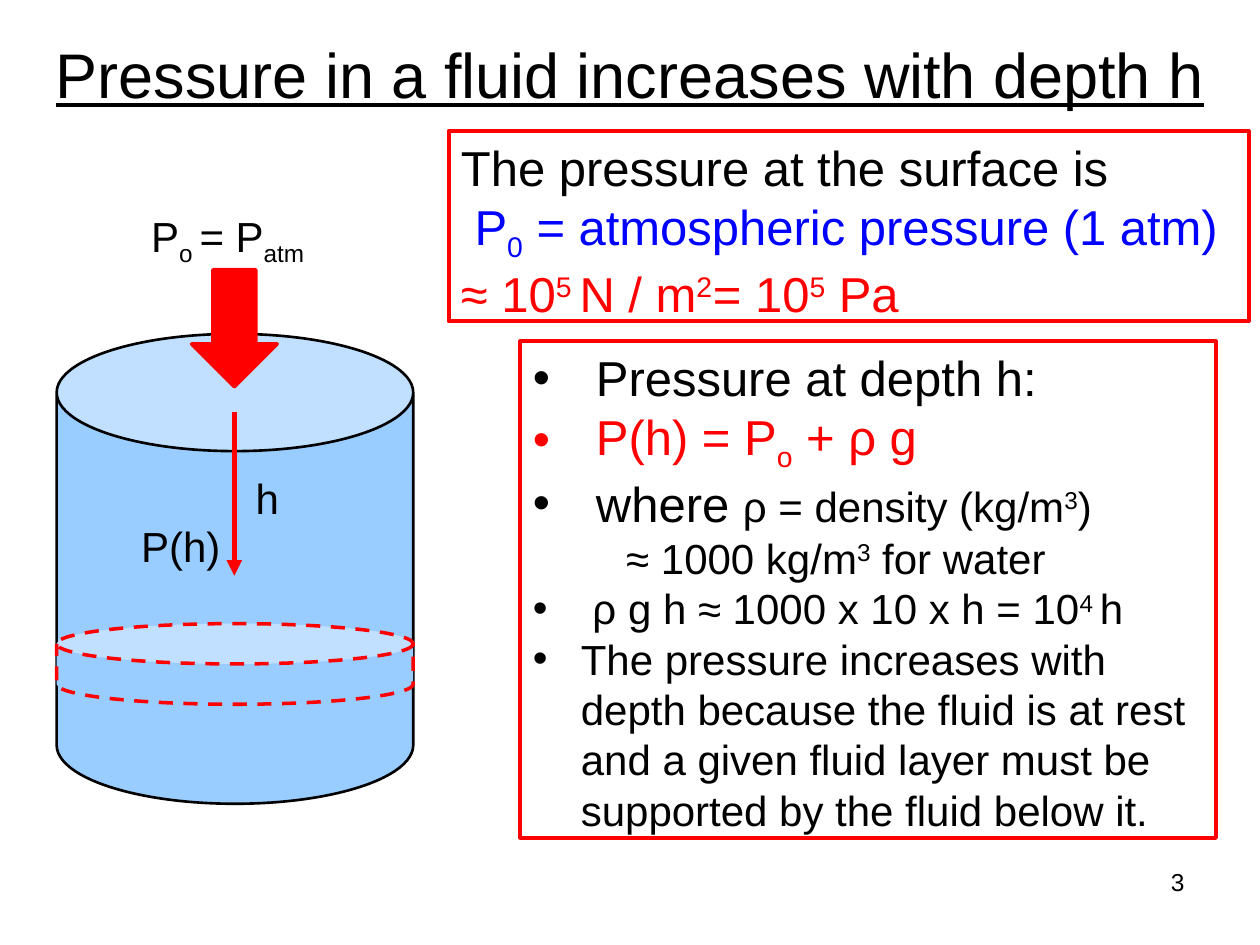
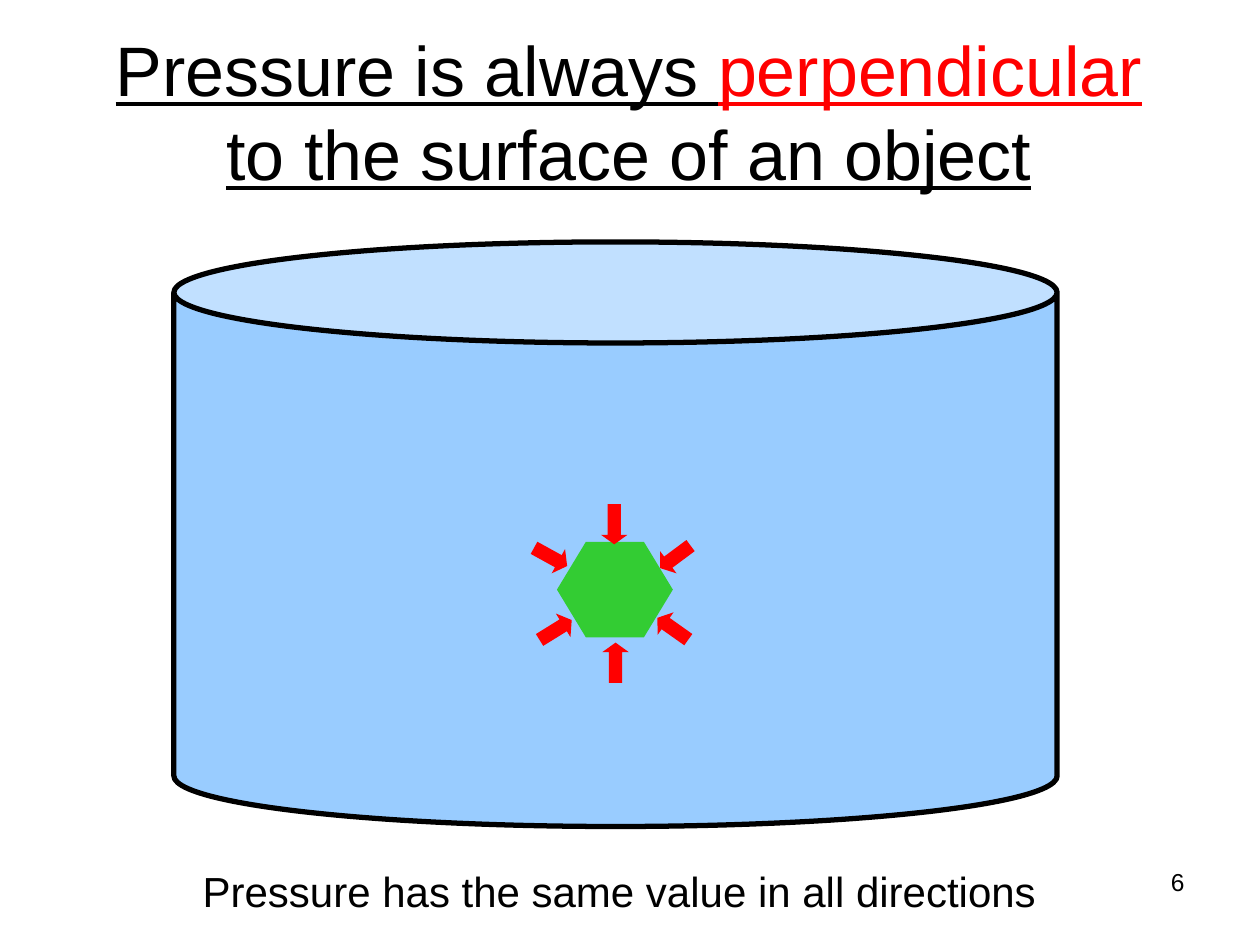
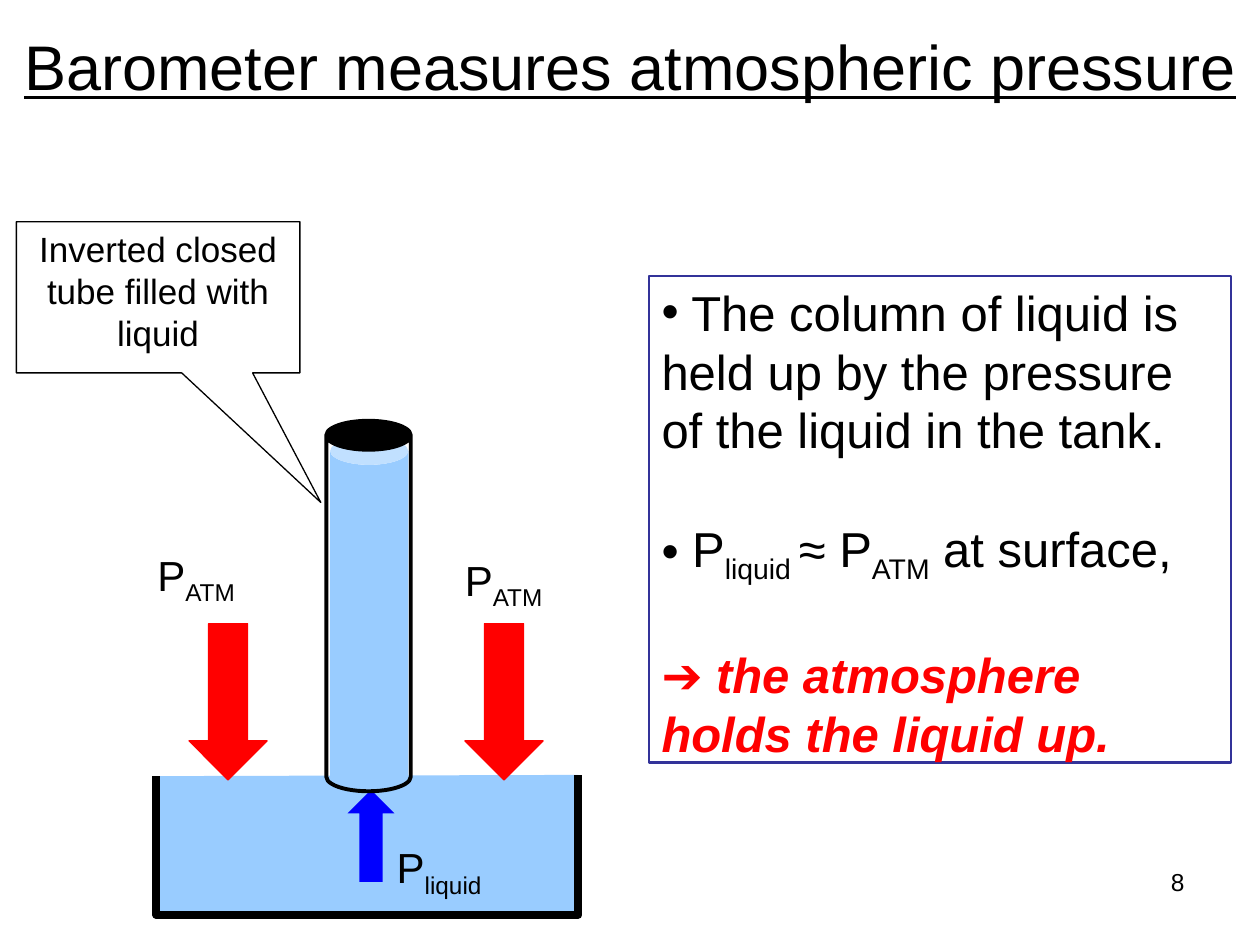
from dataclasses import dataclass

from lxml import etree
from pptx import Presentation
from pptx.dml.color import RGBColor
from pptx.enum.dml import MSO_LINE
from pptx.enum.shapes import MSO_CONNECTOR, MSO_SHAPE
from pptx.enum.text import MSO_ANCHOR, MSO_AUTO_SIZE, PP_ALIGN
from pptx.oxml.ns import qn
from pptx.util import Inches, Pt

CAN = MSO_SHAPE.CAN
DOWN_ARROW = MSO_SHAPE.DOWN_ARROW
UP_ARROW = MSO_SHAPE.UP_ARROW
HEXAGON = MSO_SHAPE.HEXAGON
ELLIPSE = MSO_SHAPE.OVAL
CALLOUT = MSO_SHAPE.RECTANGULAR_CALLOUT
LEFT, CENTER, RIGHT = PP_ALIGN.LEFT, PP_ALIGN.CENTER, PP_ALIGN.RIGHT
TOP, MIDDLE = MSO_ANCHOR.TOP, MSO_ANCHOR.MIDDLE
DASH = MSO_LINE.DASH
STRAIGHT = MSO_CONNECTOR.STRAIGHT
FIXED, GROW = MSO_AUTO_SIZE.NONE, MSO_AUTO_SIZE.SHAPE_TO_FIT_TEXT
TITLE_AND_BODY, TITLE_ONLY = 1, 5


@dataclass(frozen=True)
class Theme:
    font: str = "Arial"
    black: str = "000000"
    white: str = "FFFFFF"
    red: str = "FF0000"
    blue: str = "0000FF"
    navy: str = "333399"
    water: str = "99CCFF"
    green: str = "33CC33"
    big_title: int = 40
    title: int = 36
    body: int = 28
    label: int = 24
    callout: int = 20
    number: int = 14


THEME = Theme()
SUB = {"baseline": -25}
SUPER = {"baseline": 30}
RED = {"color": THEME.red}
BLUE = {"color": THEME.blue}
SMALL = {"size": THEME.label}
SMALL_SUPER = SMALL | SUPER
WIDE_BULLET = {"bullet": "•", "margin": 0.5, "indent": -0.5}
BULLET = {"bullet": "•", "margin": 0.38, "indent": -0.38}
INLINE_BULLET = {"bullet": "•"}
GAP = {"space_before": 34}

SURFACE_TEXT = [
    (["The pressure at the surface is"], {}),
    ([(" P", BLUE), ("0", BLUE | SUB), (" = atmospheric pressure (1 atm)", BLUE)], {}),
    ([("≈ 10", RED), ("5 ", RED | SUPER), ("N / m", RED), ("2", RED | SUPER),
      ("\t= 10", RED), ("5", RED | SUPER), (" Pa", RED)], {"tab": 2.37}),
]
DEPTH_TEXT = [
    (["Pressure at depth h:"], WIDE_BULLET),
    ([("P(h) = P", RED), ("o", RED | SUB), (" + ρ g", RED)], WIDE_BULLET),
    (["where ", ("ρ = density (kg/m", SMALL), ("3", SMALL_SUPER), (")", SMALL)], WIDE_BULLET),
    ([("≈ 1000 kg/m", SMALL), ("3", SMALL_SUPER), (" for water", SMALL)], {"margin": 0.74}),
    ([(" ρ g h ≈ 1000 x 10 x h = 10", SMALL), ("4 ", SMALL_SUPER), ("h", SMALL)], BULLET),
    ([("The pressure increases with depth because the fluid is at rest and a given "
       "fluid layer must be supported by the fluid below it.", SMALL)], BULLET),
]
COLUMN_TEXT = [
    ([" The column of liquid is"], INLINE_BULLET),
    (["held up by the pressure"], {}),
    (["of the liquid in the tank."], {}),
    ([" P", ("liquid ", SUB), "≈ P", ("ATM", SUB), " at surface,"], INLINE_BULLET | GAP),
    ([("➔ the atmosphere\nholds the liquid up.", RED | {"bold": True, "italic": True})], GAP),
]
CALLOUT_TEXT = [([line], {}) for line in ("Inverted closed", "tube filled with", "liquid")]

DEPTH_LABELS = [
    (["h"], (1.93, 3.7, 0.39, 0.5), 0.1),
    (["P", ("o ", SUB), "= P", ("atm", SUB)], (1.2, 1.67, 1.33, 0.4), 0),
    (["P(h)"], (1.12, 4.13, 0.82, 0.4), 0),
]
BAROMETER_LABELS = [
    (["P", ("ATM", SUB)], (3.59, 4.35, 0.89, 0.5), 0.1),
    (["P", ("ATM", SUB)], (1.15, 4.31, 0.89, 0.5), 0.1),
    (["P", ("liquid", SUB)], (3.05, 6.63, 0.94, 0.5), 0.1),
]
HEXAGON_ARROWS = [
    ((4.77, 4, 0.21, 0.32), 0),
    ((4.78, 5.1, 0.21, 0.32), 180),
    ((5.23, 4.84, 0.22, 0.3), 125.3),
    ((5.25, 4.27, 0.22, 0.3), 53.4),
    ((4.3, 4.85, 0.22, 0.3), 238.2),
    ((4.26, 4.27, 0.22, 0.3), 298.8),
]
TANK_OUTLINE = [(1.24, 6.16), (1.24, 7.26), (4.59, 7.26), (4.59, 6.15)]


def inches(values):
    return [Inches(value) for value in values]


def format_paragraph(paragraph, bullet=None, margin=0, indent=0, space_before=0, tab=None):
    paragraph.space_before = Pt(space_before)
    properties = paragraph._p.get_or_add_pPr()
    properties.set("marL", str(Inches(margin)))
    properties.set("indent", str(Inches(indent)))
    if bullet:
        etree.SubElement(properties, qn("a:buChar"), char=bullet)
    else:
        etree.SubElement(properties, qn("a:buNone"))
    if tab:
        tabs = etree.SubElement(properties, qn("a:tabLst"))
        etree.SubElement(tabs, qn("a:tab"), pos=str(Inches(tab)), algn="l")


def add_run(paragraph, text, size, color, baseline=0, **font_format):
    run = paragraph.add_run()
    run.text = text
    run.font.name = THEME.font
    run.font.size = Pt(size)
    run.font.color.rgb = RGBColor.from_string(color)
    for name, value in font_format.items():
        setattr(run.font, name, value)
    if baseline:
        run.font._element.set("baseline", str(baseline * 1000))


def write_text(shape, paragraphs, align=LEFT, anchor=TOP, inset=0.1, wrap=True,
               auto_size=FIXED, **run_format):
    frame = shape.text_frame
    frame.word_wrap = wrap
    frame.auto_size = auto_size
    frame.vertical_anchor = anchor
    frame.margin_left = frame.margin_right = Inches(inset)
    frame.margin_top = frame.margin_bottom = Inches(inset / 2)
    base = {"size": THEME.body, "color": THEME.black} | run_format
    for index, (runs, options) in enumerate(paragraphs):
        paragraph = frame.add_paragraph() if index else frame.paragraphs[0]
        paragraph.alignment = align
        format_paragraph(paragraph, **options)
        for run in runs:
            text, changes = (run, {}) if isinstance(run, str) else run
            for line_index, line in enumerate(text.split("\n")):
                if line_index:
                    paragraph.add_line_break()
                if line:
                    add_run(paragraph, line, **(base | changes))


def paint(shape, fill=None, line=None, width=1, dash=None):
    if fill:
        shape.fill.solid()
        shape.fill.fore_color.rgb = RGBColor.from_string(fill)
    else:
        shape.fill.background()
    if line:
        shape.line.color.rgb = RGBColor.from_string(line)
        shape.line.width = Pt(width)
        if dash:
            shape.line.dash_style = dash
    else:
        shape.line.fill.background()


def add_shape(slide, kind, box, adjustments=(), rotation=0, **style):
    shape = slide.shapes.add_shape(kind, *inches(box))
    shape.shadow.inherit = False
    shape.rotation = rotation
    for index, value in enumerate(adjustments):
        shape.adjustments[index] = value
    paint(shape, **style)
    return shape


def add_text_box(slide, box, paragraphs, **text_format):
    text_box = slide.shapes.add_textbox(*inches(box))
    write_text(text_box, paragraphs, **text_format)
    return text_box


def add_labels(slide, labels):
    for runs, box, inset in labels:
        add_text_box(slide, box, [(runs, {})], size=THEME.label, inset=inset,
                     wrap=inset == 0, auto_size=GROW)


def place(shape, box):
    shape.left, shape.top, shape.width, shape.height = inches(box)


def add_slide(presentation, layout, title_runs, title_box, number, title_size=THEME.title):
    slide = presentation.slides.add_slide(presentation.slide_layouts[layout])
    place(slide.shapes.title, title_box)
    write_text(slide.shapes.title, [(title_runs, {})], align=CENTER, anchor=MIDDLE,
               size=title_size, underline=True)
    add_text_box(slide, (7.17, 6.83, 2.33, 0.52), [([number], {})], align=RIGHT,
                 size=THEME.number)
    return slide


def fill_body(slide, box, paragraphs, line, width):
    body = slide.placeholders[1]
    place(body, box)
    write_text(body, paragraphs)
    paint(body, line=line, width=width)


def add_depth_arrow(slide):
    arrow = slide.shapes.add_connector(STRAIGHT, *inches((1.86, 3.27, 1.86, 4.57)))
    arrow.line.color.rgb = RGBColor.from_string(THEME.red)
    arrow.line.width = Pt(3)
    etree.SubElement(arrow.line._get_or_add_ln(), qn("a:tailEnd"), type="triangle")
    etree.SubElement(arrow._element.spPr, qn("a:effectLst"))


def build_depth_slide(presentation):
    slide = add_slide(presentation, TITLE_AND_BODY,
                      ["Pressure in a fluid increases with depth h"], (0, 0, 10, 1.16), "3")
    add_shape(slide, CAN, (0.45, 2.65, 2.83, 3.73), [0.329],
              fill=THEME.water, line=THEME.black, width=1.5)
    add_depth_arrow(slide)
    add_labels(slide, DEPTH_LABELS)
    fill_body(slide, (4.13, 2.71, 5.52, 3.94), DEPTH_TEXT, THEME.red, 2.25)
    surface = add_text_box(slide, (3.56, 1.04, 6.35, 1.51), SURFACE_TEXT)
    paint(surface, line=THEME.red, width=2.25)
    add_shape(slide, CAN, (0.45, 4.95, 2.83, 0.64), [0.5],
              fill=THEME.water, line=THEME.red, width=2, dash=DASH)
    add_shape(slide, DOWN_ARROW, (1.52, 2.14, 0.68, 0.93),
              fill=THEME.red, line=THEME.red, width=2)


def build_direction_slide(presentation):
    title = ["Pressure is always ", ("perpendicular\n", RED), "to the surface of an object"]
    slide = add_slide(presentation, TITLE_ONLY, title, (0.49, 0.25, 9, 1.25), "6",
                      THEME.big_title)
    add_shape(slide, CAN, (1.38, 1.92, 7.01, 4.64), [0.173],
              fill=THEME.water, line=THEME.black, width=3)
    add_shape(slide, HEXAGON, (4.42, 4.3, 0.92, 0.76), [0.303], fill=THEME.green)
    add_labels(slide, [(["Pressure has the same value in all directions"],
                        (1.51, 6.82, 6.82, 0.5), 0.1)])
    for box, rotation in HEXAGON_ARROWS:
        add_shape(slide, DOWN_ARROW, box, [0.5, 0.36], rotation, fill=THEME.red)


def build_barometer_slide(presentation):
    slide = add_slide(presentation, TITLE_AND_BODY,
                      ["Barometer measures atmospheric pressure"], (0, -0.15, 10, 1.34), "8")
    fill_body(slide, (5.15, 2.19, 4.62, 3.86), COLUMN_TEXT, THEME.navy, 1.5)
    callout = add_shape(slide, CALLOUT, (0.13, 1.76, 2.25, 1.2), [0.574, 1.357],
                        fill=THEME.white, line=THEME.black, width=0.75)
    write_text(callout, CALLOUT_TEXT, align=CENTER, size=THEME.callout)
    start, *corners = [inches(point) for point in TANK_OUTLINE]
    builder = slide.shapes.build_freeform(*start)
    builder.add_line_segments(corners, close=False)
    tank = builder.convert_to_shape()
    tank.shadow.inherit = False
    paint(tank, fill=THEME.water, line=THEME.black, width=4.5)
    add_shape(slide, CAN, (2.62, 3.47, 0.62, 2.81), [0.354], fill=THEME.water)
    add_shape(slide, ELLIPSE, (2.6, 3.35, 0.66, 0.21),
              fill=THEME.black, line=THEME.black, width=0.75)
    for left in (1.5, 3.69):
        add_shape(slide, DOWN_ARROW, (left, 4.95, 0.62, 1.24), [0.5, 0.5],
                  fill=THEME.red, line=THEME.red, width=0.75)
    add_shape(slide, UP_ARROW, (2.76, 6.27, 0.37, 0.73), [0.5, 0.5], fill=THEME.blue)
    add_labels(slide, BAROMETER_LABELS)
    add_shape(slide, CAN, (2.59, 3.34, 0.67, 2.94), [0.343], line=THEME.black, width=2.25)


def main():
    presentation = Presentation()
    presentation.slide_width = Inches(10)
    presentation.slide_height = Inches(7.5)
    build_depth_slide(presentation)
    build_direction_slide(presentation)
    build_barometer_slide(presentation)
    presentation.save("out.pptx")


if __name__ == "__main__":
    main()
